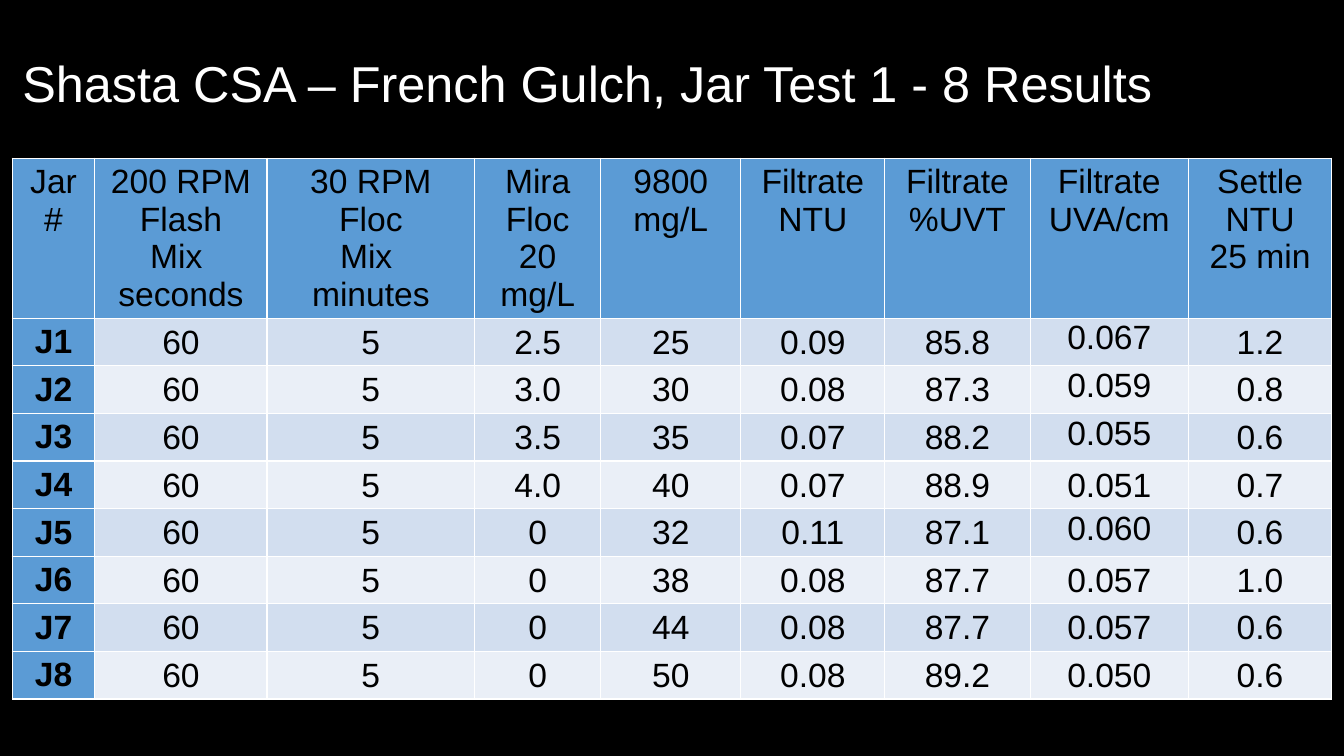
import pptx
import pptx.util
import pptx.dml.color
import pptx.enum.text
import pptx.oxml
import pptx.oxml.ns

Cm, Pt = pptx.util.Cm, pptx.util.Pt
RGBColor = pptx.dml.color.RGBColor
ALIGN = pptx.enum.text.PP_ALIGN
ANCHOR = pptx.enum.text.MSO_ANCHOR

BLACK = RGBColor(0x00, 0x00, 0x00)
WHITE = RGBColor(0xFF, 0xFF, 0xFF)
BLUE = RGBColor(0x5B, 0x9B, 0xD5)
BANDS = [RGBColor(0xD2, 0xDE, 0xEF), RGBColor(0xEA, 0xEF, 0xF7)]

WIDTHS = [2.08, 4.34, 5.23, 3.18, 3.53, 3.63, 3.66, 3.99, 3.61]
ROW = 1.04
HEADS = ["Jar#", "200 RPM\nFlash\nMix \nseconds", "30 RPM\nFloc\nMix \nminutes",
         "Mira Floc 20\nmg/L", "9800\nmg/L", "Filtrate\nNTU",
         "Filtrate\n%UVT", "Filtrate\nUVA/cm", "Settle\nNTU\n25 min"]
# Floc dose, 9800 dose, NTU, %UVT, UVA/cm, settled NTU
TESTS = [
    ["2.5", "25", "0.09", "85.8", "0.067", "1.2"],
    ["3.0", "30", "0.08", "87.3", "0.059", "0.8"],
    ["3.5", "35", "0.07", "88.2", "0.055", "0.6"],
    ["4.0", "40", "0.07", "88.9", "0.051", "0.7"],
    ["0", "32", "0.11", "87.1", "0.060", "0.6"],
    ["0", "38", "0.08", "87.7", "0.057", "1.0"],
    ["0", "44", "0.08", "87.7", "0.057", "0.6"],
    ["0", "50", "0.08", "89.2", "0.050", "0.6"],
]
UVA = 7
HIGH_JARS = (1, 2, 3, 5)  # jars whose UVA value sits at the cell top


def write(frame, text, size=24, color=BLACK, bold=False, align=ALIGN.CENTER,
          space=1.0):
    frame.text = text
    for para in frame.paragraphs:
        para.alignment = align
        para.line_spacing = space
        for run in para.runs:
            font = run.font
            font.name, font.size, font.bold = "Arial", Pt(size), bold
            font.color.rgb = color


def edge(cell):
    """Draw thin white borders on all four sides."""
    props = cell._tc.get_or_add_tcPr()
    for side in "LRTB":
        props.append(pptx.oxml.parse_xml(
            f'<a:ln{side} {pptx.oxml.ns.nsdecls("a")} w="{Pt(1)}">'
            f'<a:solidFill><a:srgbClr val="{WHITE}"/></a:solidFill></a:ln{side}>'))


def paint(cell, color):
    cell.fill.solid()
    cell.fill.fore_color.rgb = color


def add_title(slide, left, top, width, height):
    title = slide.shapes.title
    title.left, title.top, title.width, title.height = map(
        Cm, (left, top, width, height))
    frame = title.text_frame
    frame.word_wrap = True
    frame.auto_size = pptx.enum.text.MSO_AUTO_SIZE.NONE
    frame.vertical_anchor = ANCHOR.MIDDLE
    write(frame, "Shasta CSA – French Gulch, Jar Test 1 - 8 Results",
          size=36, color=WHITE, align=ALIGN.LEFT, space=0.9)


def add_results(slide, left, top):
    rows = [HEADS] + [[f"J{jar}", "60", "5"] + test
                      for jar, test in enumerate(TESTS, 1)]
    table = slide.shapes.add_table(
        len(rows), len(HEADS), Cm(left), Cm(top),
        Cm(sum(WIDTHS)), Cm(ROW * len(rows))).table
    table.first_row = table.horz_banding = False
    for column, width in zip(table.columns, WIDTHS):
        column.width = Cm(width)
    for jar, values in enumerate(rows):
        table.rows[jar].height = Cm(ROW)
        for col, value in enumerate(values):
            cell = table.cell(jar, col)
            label = jar == 0 or col == 0
            edge(cell)
            paint(cell, BLUE if label else BANDS[(jar - 1) % 2])
            write(cell.text_frame, value, bold=jar > 0 and col == 0)
            # Values are centred in tight cells
            if not label:
                cell.margin_left = cell.margin_right = cell.margin_top = Cm(0.03)
                cell.margin_bottom = 0
                if col != UVA or jar not in HIGH_JARS:
                    cell.vertical_anchor = ANCHOR.MIDDLE


def main():
    deck = pptx.Presentation()
    deck.slide_width, deck.slide_height = Cm(33.87), Cm(19.05)
    slide = deck.slides.add_slide(deck.slide_layouts[5])
    # Black background
    slide.background.fill.solid()
    slide.background.fill.fore_color.rgb = BLACK
    add_title(slide, 0.31, 0.33, 33.1, 3.68)
    add_results(slide, 0.31, 3.99)
    deck.save("out.pptx")


if __name__ == "__main__":
    main()
